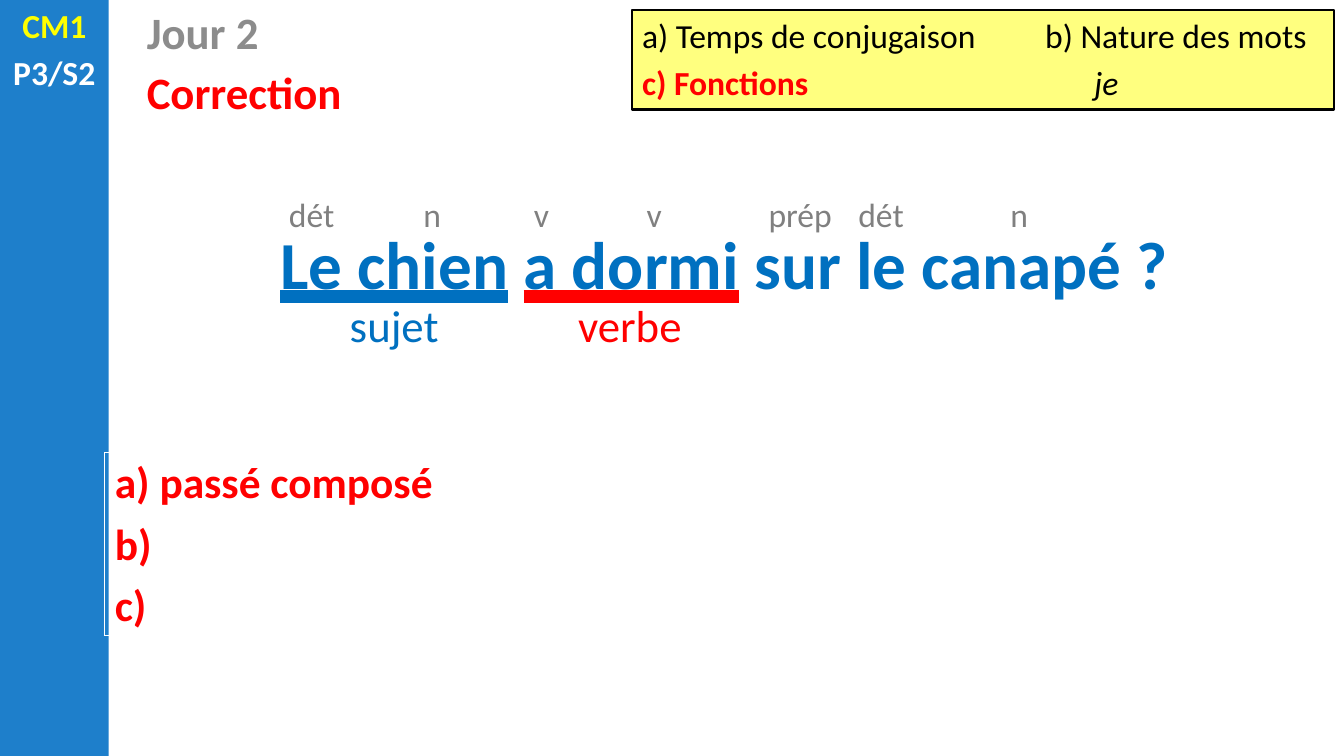
from lxml.etree import SubElement
from pptx import Presentation
from pptx.dml.color import RGBColor
from pptx.enum.shapes import MSO_SHAPE
from pptx.enum.text import MSO_ANCHOR, MSO_UNDERLINE, PP_ALIGN
from pptx.oxml.ns import qn
from pptx.util import Cm, Pt

COLORS = {
    "band": "1E7FCB", "yellow": "FFFF00", "white": "FFFFFF", "day": "8C8C8C",
    "blue": "0070C0", "red": "FF0000", "black": "000000", "label": "808080",
}


def write(frame, lines, size, align=PP_ALIGN.LEFT, bold=False, before=0.2):
    frame.word_wrap = True
    frame.vertical_anchor = MSO_ANCHOR.TOP
    for index, line in enumerate(lines):
        paragraph = frame.add_paragraph() if index else frame.paragraphs[0]
        paragraph.alignment = align
        if index:
            paragraph.space_before = Pt(size * before)
        for text, color in line:
            run = paragraph.add_run()
            run.text = text
            run.font.name = "Calibri"
            run.font.size = Pt(size)
            run.font.bold = bold
            run.font.color.rgb = RGBColor.from_string(COLORS[color])
    return frame


def add_text(left, top, width, height, lines, size, align=PP_ALIGN.LEFT, bold=False):
    box = slide.shapes.add_textbox(Cm(left), Cm(top), Cm(width), Cm(height))
    return write(box.text_frame, lines, size, align, bold)


presentation = Presentation()
presentation.slide_width = Cm(33.87)
presentation.slide_height = Cm(19.05)
slide = presentation.slides.add_slide(presentation.slide_layouts[6])

band = slide.shapes.add_shape(MSO_SHAPE.RECTANGLE, 0, 0, Cm(2.74), Cm(19.05))
band.shadow.inherit = False
band.fill.solid()
band.fill.fore_color.rgb = RGBColor.from_string(COLORS["band"])
band.line.fill.background()

add_text(0, 0, 2.74, 2.51, [[("CM1", "yellow")], [("P3/S2", "white")]],
         24, PP_ALIGN.CENTER, True)
add_text(3.45, 0, 20.09, 1.63, [[("Jour 2", "day")]], 32, bold=True)
add_text(3.45, 1.5, 12.27, 1.63, [[("Correction", "red")]], 32, bold=True)

sentence_parts = ["Le chien", " ", "a dormi", " sur le canapé ?"]
sentence = add_text(2.64, 5.49, 31.23, 2.31, [[(part, "blue") for part in sentence_parts]],
                    48, PP_ALIGN.CENTER, True)
subject, _, verb, _ = sentence.paragraphs[0].runs
for group, color in ((subject, "blue"), (verb, "red")):
    group.font.underline = MSO_UNDERLINE.HEAVY_LINE
    underline_fill = SubElement(group.font._element, qn("a:uFill"))
    solid = SubElement(underline_fill, qn("a:solidFill"))
    SubElement(solid, qn("a:srgbClr"), val=COLORS[color])
    group.font._element.find(qn("a:latin")).addprevious(underline_fill)

tasks = slide.shapes.add_shape(MSO_SHAPE.RECTANGLE, Cm(15.93), Cm(0.25), Cm(17.7), Cm(2.51))
tasks.shadow.inherit = False
tasks.fill.solid()
tasks.fill.fore_color.rgb = RGBColor.from_string(COLORS["yellow"])
yellow = tasks.fill._xPr.find(qn("a:solidFill"))[0]
SubElement(yellow, qn("a:alpha"), val="50000")
tasks.line.color.rgb = RGBColor.from_string(COLORS["black"])
tasks.line.width = Pt(1.5)
write(tasks.text_frame, [
    [("a) Temps de conjugaison\tb) Nature des mots", "black")],
    [("c) Fonctions\t", "red"), ("je", "black")],
], 24)
for paragraph, stop in zip(tasks.text_frame.paragraphs, (10.16, 11.4)):
    tabs = SubElement(paragraph._p.get_or_add_pPr(), qn("a:tabLst"))
    SubElement(tabs, qn("a:tab"), pos=str(Cm(stop)), algn="l")
functions, pronoun = tasks.text_frame.paragraphs[1].runs
functions.font.bold = True
pronoun.font.italic = True

for left, function, color in ((8.36, "sujet", "blue"), (14.3, "verbe", "red")):
    add_text(left, 7.39, 3.15, 1.63, [[(function, color)]], 32, PP_ALIGN.CENTER)

word_classes = [(6.71, "dét"), (9.75, "n"), (12.5, "v"), (15.34, "v"),
                (19.02, "prép"), (21.06, "dét"), (24.54, "n")]
for left, word_class in word_classes:
    add_text(left, 4.75, 2.29, 1.27, [[(word_class, "label")]], 24, PP_ALIGN.CENTER)

answers = slide.shapes.add_table(1, 1, Cm(2.64), Cm(11.4), Cm(31.22), Cm(4.62)).table
answers.first_row = False
answers.horz_banding = False
answer_cell = answers.cell(0, 0)
answer_cell.fill.background()
write(answer_cell.text_frame,
      [[(answer, "red")] for answer in ("a) passé composé", "b)", "c)")],
      31, bold=True, before=0)
for paragraph in answer_cell.text_frame.paragraphs:
    paragraph.space_after = Pt(6)

presentation.save("out.pptx")
